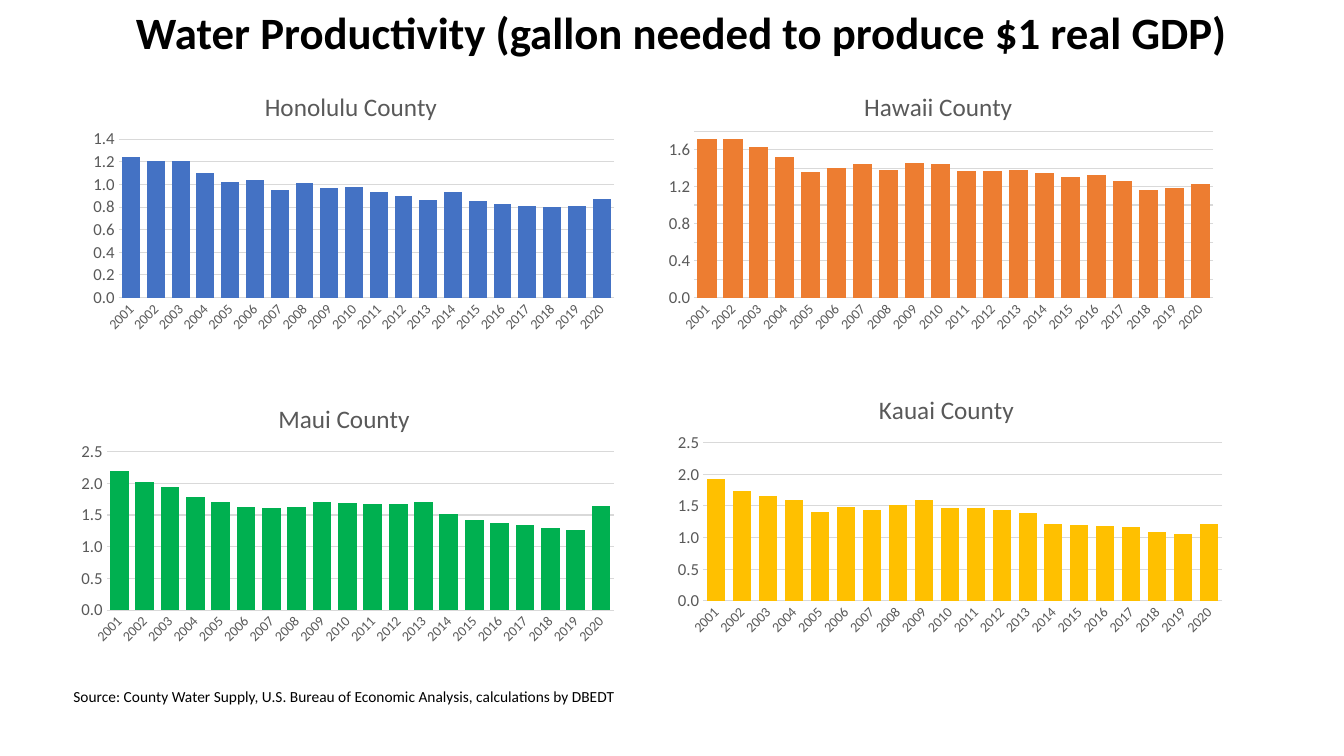
from dataclasses import dataclass

import pptx
import pptx.chart.data
import pptx.dml.color
import pptx.enum.chart
import pptx.enum.text
import pptx.oxml
import pptx.oxml.ns
import pptx.util

Pt = pptx.util.Pt
RGBColor = pptx.dml.color.RGBColor

BLACK = RGBColor(0x00, 0x00, 0x00)
GRAY = RGBColor(0x59, 0x59, 0x59)
LIGHT_GRAY = RGBColor(0xD9, 0xD9, 0xD9)
BLUE = RGBColor(0x44, 0x72, 0xC4)
ORANGE = RGBColor(0xED, 0x7D, 0x31)
GREEN = RGBColor(0x00, 0xB0, 0x50)
YELLOW = RGBColor(0xFF, 0xC0, 0x00)

FONT = "Calibri"
YEARS = [str(year) for year in range(2001, 2021)]
CHART_HEIGHT = 195.12
LABEL_ANGLE = "-2700000"  # 45 degrees, in 60000ths


@dataclass(frozen=True)
class County:
    """A county chart: place in points, title_left and plot_top as shares of the chart."""
    name: str
    left: float
    top: float
    width: float
    color: RGBColor
    gap: int
    maximum: float
    step: float
    title_left: float
    plot_top: float
    gallons: tuple[float, ...]


COUNTIES = (
    County("Honolulu County", 57.6, 46.8, 388.8, BLUE, 39, 1.4, 0.2, 0.33, 0.27,
           (1.24, 1.21, 1.21, 1.1, 1.02, 1.04, 0.95, 1.01, 0.97, 0.98,
            0.93, 0.9, 0.86, 0.93, 0.85, 0.83, 0.81, 0.8, 0.81, 0.87)),
    County("Hawaii County", 467.28, 46.8, 407.52, ORANGE, 36, 1.8, 0.2, 0.36, 0.24,
           (1.71, 1.71, 1.63, 1.52, 1.36, 1.4, 1.44, 1.38, 1.45, 1.44,
            1.37, 1.37, 1.38, 1.35, 1.3, 1.33, 1.26, 1.16, 1.18, 1.23)),
    County("Maui County", 48.24, 270, 398.16, GREEN, 35, 2.5, 0.5, 0.37, 0.27,
           (2.19, 2.02, 1.95, 1.79, 1.71, 1.62, 1.61, 1.63, 1.71, 1.69,
            1.68, 1.67, 1.7, 1.51, 1.42, 1.38, 1.34, 1.29, 1.27, 1.65)),
    County("Kauai County", 473.76, 263.52, 407.52, YELLOW, 44, 2.5, 0.5, 0.37, 0.27,
           (1.93, 1.73, 1.66, 1.6, 1.41, 1.48, 1.44, 1.52, 1.59, 1.47,
            1.46, 1.43, 1.38, 1.22, 1.2, 1.18, 1.16, 1.09, 1.06, 1.22)),
)


def set_font(font, size: float, color: RGBColor, bold: bool = False) -> None:
    font.name = FONT
    font.size = Pt(size)
    font.bold = bold
    font.color.rgb = color


def add_text(page, text: str, *, left: float, top: float, width: float, height: float,
             size: float, bold: bool = False) -> None:
    box = page.shapes.add_textbox(Pt(left), Pt(top), Pt(width), Pt(height))
    frame = box.text_frame
    frame.word_wrap = True
    frame.auto_size = pptx.enum.text.MSO_AUTO_SIZE.SHAPE_TO_FIT_TEXT
    span = frame.paragraphs[0].add_run()
    span.text = text
    set_font(span.font, size, BLACK, bold)


def set_layout(element, index: int, **shares: float) -> None:
    """Fix the place of a chart part, given as shares of the chart's size."""
    for old in element.findall(pptx.oxml.ns.qn("c:layout")):
        element.remove(old)
    modes = '<c:xMode val="edge"/><c:yMode val="edge"/>'
    if "w" in shares:
        modes = '<c:layoutTarget val="inner"/>' + modes
    places = "".join(f'<c:{key} val="{value}"/>' for key, value in shares.items())
    element.insert(index, pptx.oxml.parse_xml(
        f'<c:layout {pptx.oxml.ns.nsdecls("c")}><c:manualLayout>'
        f'{modes}{places}</c:manualLayout></c:layout>'))


def style_axes(chart, county: County) -> None:
    years, gallons = chart.category_axis, chart.value_axis
    for axis, size in ((years, 10), (gallons, 12)):
        axis.major_tick_mark = pptx.enum.chart.XL_TICK_MARK.NONE
        axis.minor_tick_mark = pptx.enum.chart.XL_TICK_MARK.NONE
        set_font(axis.tick_labels.font, size, GRAY)
    gallons.minimum_scale = 0
    gallons.maximum_scale = county.maximum
    gallons.major_unit = county.step
    gallons.tick_labels.number_format = "0.0"
    gallons.tick_labels.number_format_is_linked = False
    gallons.format.line.fill.background()
    for line in (years.format.line, gallons.major_gridlines.format.line):
        line.color.rgb = LIGHT_GRAY
        line.width = Pt(0.75)
    years._element.find(".//" + pptx.oxml.ns.qn("a:bodyPr")).set("rot", LABEL_ANGLE)


def add_county_chart(page, county: County) -> None:
    data = pptx.chart.data.CategoryChartData(number_format="0.00")
    data.categories = YEARS
    data.add_series("Series 1", county.gallons)
    chart = page.shapes.add_chart(
        pptx.enum.chart.XL_CHART_TYPE.COLUMN_CLUSTERED, Pt(county.left), Pt(county.top),
        Pt(county.width), Pt(CHART_HEIGHT), data).chart
    set_font(chart.font, 10, BLACK)
    chart.has_legend = False

    chart.has_title = True
    paragraph = chart.chart_title.text_frame.paragraphs[0]
    span = paragraph.add_run()
    span.text = county.name
    set_font(span.font, 18, GRAY)
    set_layout(chart.chart_title._element, 1, x=county.title_left, y=0.07)

    plot = chart.plots[0]
    plot.gap_width = county.gap
    plot.overlap = -27
    plot.vary_by_categories = False
    fill = plot.series[0].format.fill
    fill.solid()
    fill.fore_color.rgb = county.color
    style_axes(chart, county)
    plot_area = chart._chartSpace.find(".//" + pptx.oxml.ns.qn("c:plotArea"))
    set_layout(plot_area, 0, x=0.07, y=county.plot_top, w=0.91,
               h=round(0.85 - county.plot_top, 2))


def main() -> None:
    deck = pptx.Presentation()
    deck.slide_width, deck.slide_height = Pt(960), Pt(540)
    page = deck.slides.add_slide(deck.slide_layouts[6])
    for county in COUNTIES:
        add_county_chart(page, county)
    add_text(page, "Water Productivity (gallon needed to produce $1 real GDP)",
             left=90, top=0, width=800, height=46, size=32, bold=True)
    add_text(page, "Source: County Water Supply, U.S. Bureau of Economic Analysis, "
             "calculations by DBEDT",
             left=45.36, top=487.44, width=444, height=21, size=11)
    deck.save("out.pptx")


if __name__ == "__main__":
    main()
